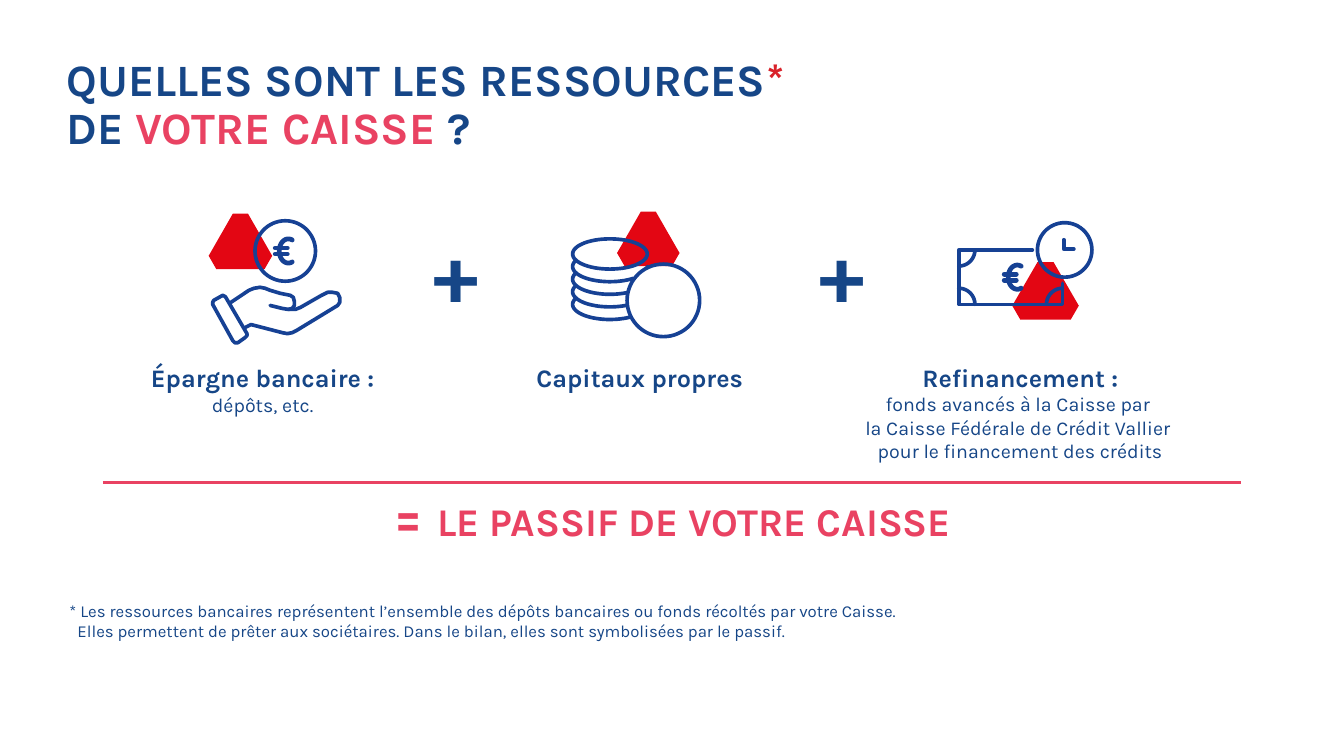
from itertools import groupby
from math import cos, hypot, radians, sin

from lxml import etree
from pptx import Presentation
from pptx.dml.color import RGBColor
from pptx.enum.shapes import MSO_CONNECTOR
from pptx.enum.text import MSO_ANCHOR, MSO_AUTO_SIZE, PP_ALIGN
from pptx.oxml.ns import qn
from pptx.util import Inches, Pt

NAVY = RGBColor(0x16, 0x46, 0x87)
INK = RGBColor(0x16, 0x41, 0x94)
PINK = RGBColor(0xE9, 0x42, 0x62)
RED = RGBColor(0xE3, 0x06, 0x13)
STAR_RED = RGBColor(0xD9, 0x22, 0x2A)
FONT = "Karla"
STROKE = 2.6
LEFT, CENTER = PP_ALIGN.LEFT, PP_ALIGN.CENTER
TOP, MIDDLE = MSO_ANCHOR.TOP, MSO_ANCHOR.MIDDLE
NO_AUTOFIT = MSO_AUTO_SIZE.NONE
STRAIGHT = MSO_CONNECTOR.STRAIGHT

HEAD = {"size": Pt(18), "bold": True, "color": NAVY}
DETAIL = {"size": Pt(14), "bold": False, "color": NAVY}
TITLE = {"size": Pt(32), "bold": True, "color": NAVY}
PLUS = {"size": Pt(60), "bold": True, "color": NAVY}
NOTE = {"size": Pt(12), "bold": False, "color": NAVY}
TOTAL = {"size": Pt(28), "bold": True, "color": PINK}

CUFF = [(.23, .94), (.21, .93), (.12, .98), (.11, 1), (.11, 1.02), (.31, 1.38), (.33, 1.4),
        (.36, 1.4), (.43, 1.35), (.45, 1.33), (.45, 1.31), (.24, .95), (.23, .94)]
PALM = [(.29, 1), (.47, .88), (.52, .86), (.58, .85), (.63, .86), (.68, .88),
        (.78, .91), (.88, .93), (.91, .95), (.92, .99), (.92, 1.03), (.9, 1.06),
        (.86, 1.07), (.8, 1.06), (.68, 1.03)]
FINGERS = [(.86, 1.07), (.93, 1.07), (.98, 1.05), (1.19, .93), (1.25, .9), (1.3, .9),
           (1.35, .91), (1.37, .95), (1.37, 1), (1.35, 1.03), (.94, 1.28), (.9, 1.3),
           (.85, 1.31), (.8, 1.3), (.49, 1.22), (.43, 1.25)]


def write_text(shape, spans, align=LEFT, anchor=TOP):
    """Fill a shape with one paragraph of formatted spans and line breaks."""
    frame = shape.text_frame
    for name, value in {"word_wrap": True, "auto_size": NO_AUTOFIT,
                        "vertical_anchor": anchor, "margin_left": Inches(0.1),
                        "margin_right": Inches(0.1), "margin_top": Inches(0.05),
                        "margin_bottom": Inches(0.05)}.items():
        setattr(frame, name, value)
    para = frame.paragraphs[0]
    para.alignment = align
    para.space_before = Pt(0)
    for text, style in spans:
        for index, line in enumerate(text.split("\n")):
            if index:
                para.add_line_break()
            if line:
                span = para.add_run()
                span.text = line
                span.font.name = FONT
                for name, value in style.items():
                    if name == "color":
                        span.font.color.rgb = value
                    else:
                        setattr(span.font, name, value)
    return para


def add_text(page, box, spans, align=CENTER, anchor=TOP):
    """Add a text box at a box given in inches."""
    shape = page.shapes.add_textbox(*map(Inches, box))
    return write_text(shape, spans, align, anchor)


def add_outline(page, origin, paths):
    """Draw one freeform made of several paths relative to an origin."""
    builder = None
    for points in paths:
        corners = [(Inches(origin[0] + x), Inches(origin[1] + y)) for x, y in points]
        if builder is None:
            builder = page.shapes.build_freeform(*corners[0])
        else:
            builder.move_to(*corners[0])
        builder.add_line_segments(corners[1:], close=points[0] == points[-1])
    shape = builder.convert_to_shape()
    shape.shadow.inherit = False
    return shape


def add_strokes(page, origin, paths, width=STROKE):
    """Draw paths as round-ended ink strokes."""
    shape = add_outline(page, origin, paths)
    shape.fill.background()
    shape.line.color.rgb = INK
    shape.line.width = Pt(width)
    outline = shape.line._get_or_add_ln()
    outline.set("cap", "rnd")
    etree.SubElement(outline, qn("a:round"))


def add_accent(page, origin, x, y, width, height):
    """Draw the red cut-corner triangle behind an icon."""
    shares = [(.12, 1), (0, .76), (.38, 0), (.62, 0), (1, .76), (.88, 1), (.12, 1)]
    points = [(x + width * across, y + height * down) for across, down in shares]
    shape = add_outline(page, origin, [points])
    shape.fill.solid()
    shape.fill.fore_color.rgb = RED
    shape.line.fill.background()


def arc(x, y, across, down, start=0, end=360):
    """Return points along an elliptical arc, in degrees clockwise from the right."""
    turns = [radians(start + (end - start) * step / 60) for step in range(61)]
    return [(x + across * cos(turn), y + down * sin(turn)) for turn in turns]


def add_euro(page, origin, x, y):
    """Draw a euro sign around a centre."""
    bars = [[(x - .12, y + bar), (x, y + bar)] for bar in (-.03, .03)]
    add_strokes(page, origin, [arc(x + .01, y, .09, .12, 65, 295)] + bars, width=3.4)


def draw_savings(page, origin):
    """Draw a hand holding a euro coin."""
    add_accent(page, origin, .07, .12, .63, .55)
    add_strokes(page, origin, [CUFF, PALM, FINGERS, arc(.83, .49, .3, .3)])
    add_euro(page, origin, .85, .49)


def draw_equity(page, origin):
    """Draw a stack of coins, hidden in part by one coin in front."""
    x, y, radius = .98, .98, .36
    add_accent(page, origin, .52, .1, .62, .54)
    paths = [arc(x, y, radius, radius), arc(.45, .52, .37, .15)]
    for level in range(1, 5):
        edge = arc(.45, .52 + level * .125, .37, .15, 0, 205)
        pieces = groupby(edge, lambda point: hypot(point[0] - x, point[1] - y) > radius)
        paths += [list(piece) for visible, piece in pieces if visible]
    add_strokes(page, origin, paths)


def draw_refinancing(page, origin):
    """Draw a banknote with a clock."""
    left, top, right, bottom = .11, .48, 1.14, 1.02
    add_accent(page, origin, .64, .6, .66, .57)
    corners = ((left, top, 0), (left, bottom, 270), (right, bottom, 180))
    paths = [[(.84, top), (left, top), (left, bottom), (right, bottom), (right, .81)]]
    paths += [arc(x, y, .16, .16, start, start + 90) for x, y, start in corners]
    add_strokes(page, origin, paths)
    add_euro(page, origin, .68, .75)
    add_strokes(page, origin, [arc(1.16, .48, .27, .27)])
    add_strokes(page, origin, [[(1.15, .38), (1.15, .47), (1.25, .47)]], width=2.8)


def add_title(page, box):
    """Place the two-line title in its placeholder."""
    title = page.shapes.title
    for name, value in zip(("left", "top", "width", "height"), box):
        setattr(title, name, Inches(value))
    para = write_text(title, [("QUELLES SONT LES RESSOURCES", TITLE),
                              ("*\n", {**TITLE, "color": STAR_RED}), ("DE ", TITLE),
                              ("VOTRE CAISSE", {**TITLE, "color": PINK}), (" ?", TITLE)])
    para.line_spacing = 0.9


def add_total(page, box):
    """Draw the rule along the top of the box and the total under it."""
    left, top, width, _ = box
    rule = page.shapes.add_connector(STRAIGHT, Inches(left), Inches(top),
                                     Inches(left + width), Inches(top))
    rule.line.color.rgb = PINK
    rule.line.width = Pt(2)
    etree.SubElement(rule._element.spPr, qn("a:effectLst"))
    add_text(page, box, [("= ", {**TOTAL, "size": Pt(40)}),
                         ("LE PASSIF DE VOTRE CAISSE", TOTAL)], anchor=MIDDLE)


def add_footnote(page, box):
    """Write the footnote with a hanging indent."""
    para = add_text(page, box, [(
        "* Les ressources bancaires représentent l’ensemble des dépôts bancaires ou fonds "
        "récoltés par votre Caisse.\nElles permettent de prêter aux sociétaires. "
        "Dans le bilan, elles sont symbolisées par le passif.", NOTE)], LEFT)
    indent = Inches(0.08)
    properties = para._p.get_or_add_pPr()
    properties.set("marL", str(indent))
    properties.set("indent", str(-indent))


def main():
    """Build the slide and save the deck."""
    deck = Presentation()
    deck.slide_width, deck.slide_height = Inches(13.33), Inches(7.5)
    page = deck.slides.add_slide(deck.slide_layouts[5])
    add_title(page, (0.56, 0.52, 10.76, 0.61))
    resources = [
        (draw_savings, 2, (1.06, 3.55, 3.09, 0.64), "Épargne bancaire :", "\ndépôts, etc."),
        (draw_equity, 5.6, (4.8, 3.55, 3.09, 0.4), "Capitaux propres", ""),
        (draw_refinancing, 9.4, (7.93, 3.54, 4.38, 1.11), "Refinancement :",
         "\nfonds avancés à la Caisse par \nla Caisse Fédérale de Crédit Vallier "
         "\npour le financement des crédits"),
    ]
    for draw, left, box, heading, detail in resources:
        draw(page, (left, 2))
        add_text(page, box, [(heading, HEAD), (detail, DETAIL)])
    for left in (4.2, 8.03):
        add_text(page, (left, 2.35, 0.63, 0.64), [("+", PLUS)], anchor=MIDDLE)
    add_total(page, (1.02, 4.79, 11.29, 0.63))
    add_footnote(page, (0.59, 5.91, 10.18, 0.61))
    deck.save("out.pptx")


if __name__ == "__main__":
    main()
